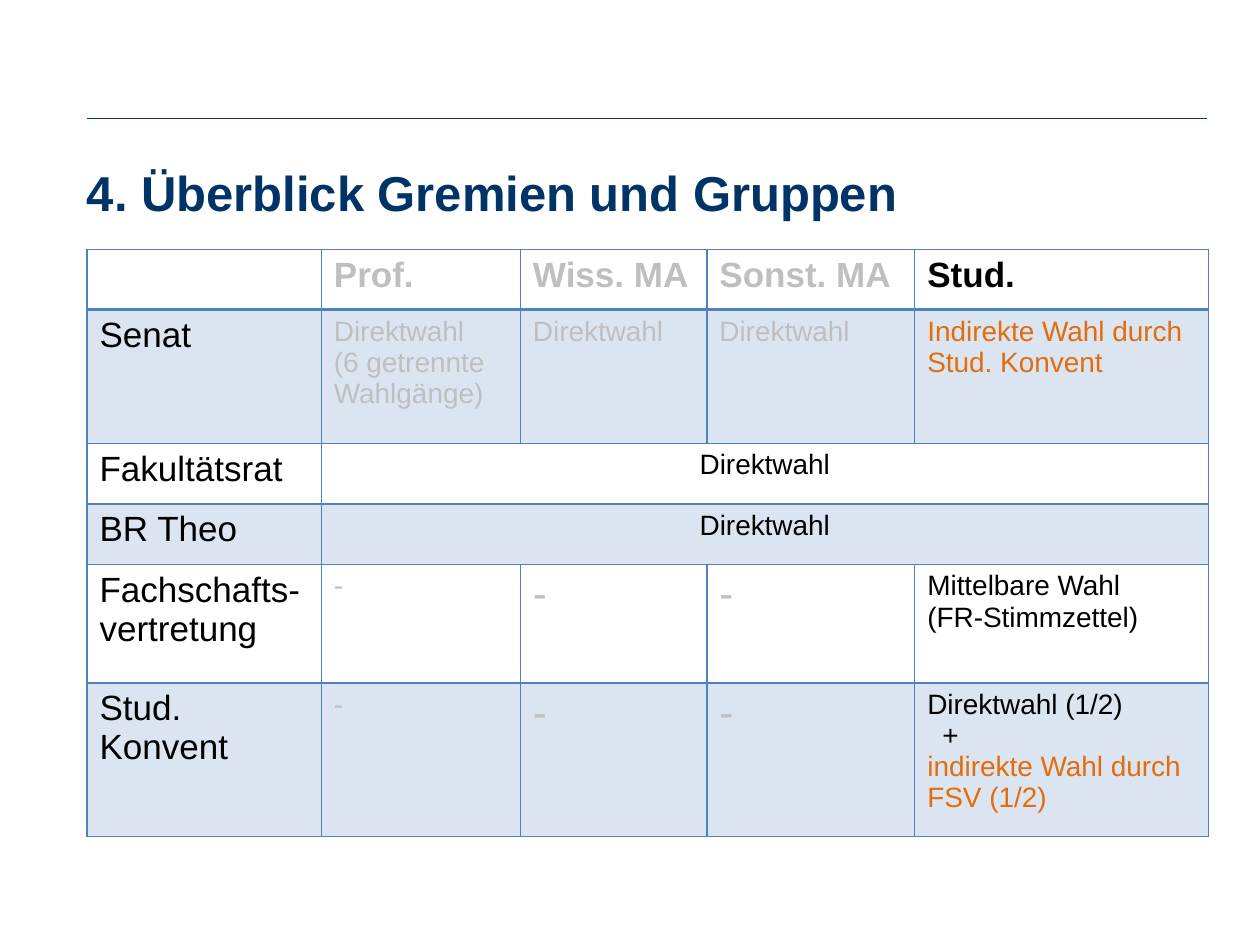
from lxml import etree
from pptx import Presentation
from pptx import util as u
from pptx.dml.color import RGBColor
from pptx.enum import shapes, text
from pptx.oxml import ns

NAVY, BLUE, GREY, ORANGE, BLACK = "003366", "4F81BD", "BFBFBF", "E46C0A", "000000"


def rgb(code):
    return RGBColor.from_string(code)


def sub(parent, tag, **attrs):
    return etree.SubElement(parent, ns.qn(tag), {k: str(v) for k, v in attrs.items()})


class Deck:
    font = "Arial"

    def __init__(self, width, height):
        self.prs = Presentation()
        self.prs.slide_width, self.prs.slide_height = u.Inches(width), u.Inches(height)
        self.slide = self.prs.slides.add_slide(self.prs.slide_layouts[6])

    def style(self, p, size, color, bold=False):
        p.font.name, p.font.size, p.font.bold = self.font, u.Pt(size), bold
        p.font.color.rgb = rgb(color)

    def line(self, x1, y1, x2, y2, color, width):
        ends = [u.Inches(v) for v in (x1, y1, x2, y2)]
        c = self.slide.shapes.add_connector(shapes.MSO_CONNECTOR.STRAIGHT, *ends)
        c.line.color.rgb, c.line.width = rgb(color), u.Pt(width)
        sub(c._element.spPr, "a:effectLst")

    def title(self, words, x, y, w, h, size):
        tf = self.slide.shapes.add_textbox(*[u.Inches(v) for v in (x, y, w, h)]).text_frame
        tf.word_wrap = True
        tf.margin_left = tf.margin_right = tf.margin_top = tf.margin_bottom = 0
        p = tf.paragraphs[0]
        p.text, p.line_spacing = words, u.Pt(size)
        self.style(p, size, NAVY, True)

    def table(self, x, y, cols, rows):
        box = [u.Inches(v) for v in (x, y, sum(cols), sum(rows))]
        table = self.slide.shapes.add_table(len(rows), len(cols), *box).table
        table.first_row = table.horz_banding = False
        for col, width in zip(table.columns, cols):
            col.width = u.Inches(width)
        for row, height in zip(table.rows, rows):
            row.height = u.Inches(height)
        return table

    def borders(self, cell, color, **widths):
        tc_pr = cell._tc.get_or_add_tcPr()
        for side in "LRTB":
            ln = sub(tc_pr, f"a:ln{side}", w=u.Pt(widths.get(side, 1)))
            sub(sub(ln, "a:solidFill"), "a:srgbClr", val=color)

    def shade(self, cell, color, percent):
        cell.fill.solid()
        cell.fill.fore_color.rgb = rgb(color)
        clr = cell._tc.tcPr.find(ns.qn("a:solidFill")).find(ns.qn("a:srgbClr"))
        sub(clr, "a:alpha", val=percent * 1000)

    def fill_text(self, cell, paragraphs, align=None):
        tf = cell.text_frame
        for i, (words, size, color, bold, indent) in enumerate(paragraphs):
            p = tf.add_paragraph() if i else tf.paragraphs[0]
            p.text = words
            if align is not None:
                p.alignment = align
            if indent:
                p._p.get_or_add_pPr().set("marL", str(u.Inches(indent)))
            self.style(p, size, color, bold)


def item(words, size=16, color=BLACK, bold=False, indent=0):
    return [(words, size, color, bold, indent)]


def main():
    deck = Deck(10, 7.5)
    deck.line(9.58, 0.94, 0.69, 0.94, NAVY, 0.75)
    deck.title("4. Überblick Gremien und Gruppen", 0.69, 1.37, 8.9, 0.39, 28)

    direct = item("Direktwahl", color=GREY)
    dashes = [item("-", size, GREY) for size in (16, 24, 24)]
    header = [item(name, 20, GREY, True) for name in ("Prof.", "Wiss. MA", "Sonst. MA")]
    content = [
        [[], *header, item("Stud.", 20, BLACK, True)],
        [item("Senat", 20), item("Direktwahl\v(6 getrennte Wahlgänge)", color=GREY),
         direct, direct, item("Indirekte Wahl durch Stud. Konvent", color=ORANGE)],
        [item("Fakultätsrat", 20), item("Direktwahl")],
        [item("BR Theo", 20), item("Direktwahl")],
        [item("Fachschafts-vertretung", 20), *dashes,
         item("Mittelbare Wahl\v(FR-Stimmzettel)")],
        [item("Stud. Konvent", 20), *dashes,
         item("Direktwahl (1/2)") + item("+", indent=0.12)
         + item("indirekte Wahl durch FSV (1/2)", color=ORANGE)],
    ]
    shaded_rows = (1, 3, 5)
    table = deck.table(0.69, 1.98, [1.86, 1.58, 1.48, 1.65, 2.33],
                       [0.48, 1.06, 0.48, 0.48, 0.94, 1.22])
    for r, row in enumerate(content):
        merged = len(row) == 2
        for c in range(len(table.columns)):
            cell = table.cell(r, c)
            deck.borders(cell, BLUE, T=2 if r == 1 else 1, B=2 if r == 0 else 1)
            if r in shaded_rows:
                deck.shade(cell, BLUE, 20)
            else:
                cell.fill.background()
        if merged:
            table.cell(r, 1).merge(table.cell(r, 4))
        for c, paragraphs in enumerate(row):
            centred = text.PP_ALIGN.CENTER if merged and c == 1 else None
            deck.fill_text(table.cell(r, c), paragraphs, centred)

    deck.prs.save("out.pptx")


if __name__ == "__main__":
    main()
